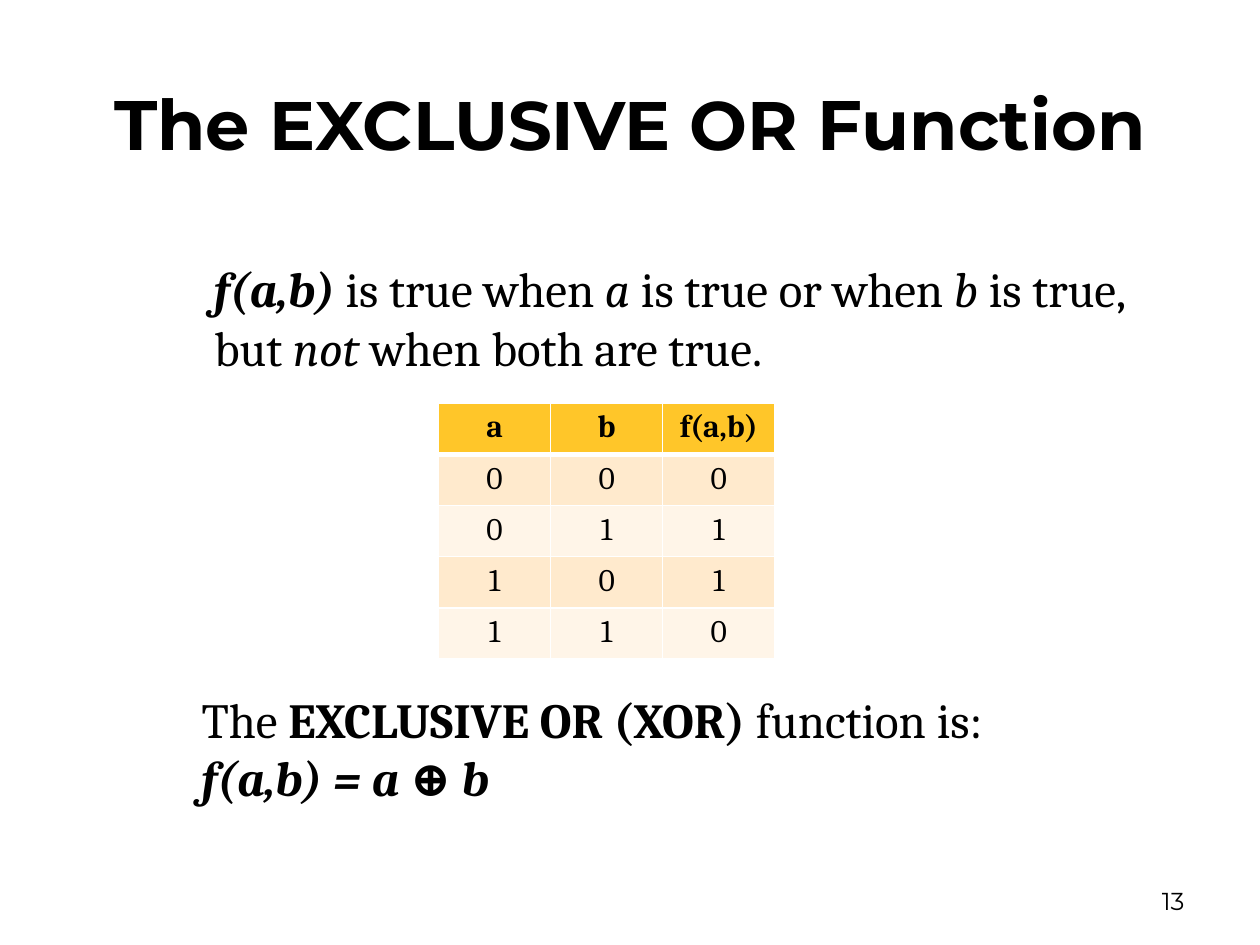
import pptx
import pptx.util
import pptx.dml.color
import pptx.enum.text
import pptx.oxml
import pptx.oxml.ns

Inches, Pt = pptx.util.Inches, pptx.util.Pt
Align = pptx.enum.text.PP_ALIGN
Anchor = pptx.enum.text.MSO_ANCHOR


def paint(part, color):
    part.rgb = pptx.dml.color.RGBColor.from_string(color)


def write(para, runs, size, face="Cambria"):
    """Add (text, style) runs; b is bold, i is italic."""
    for text, style in runs:
        run = para.add_run()
        run.text = text
        run.font.name, run.font.size = face, Pt(size)
        run.font.bold, run.font.italic = "b" in style, "i" in style
        paint(run.font.color, "000000")


deck = pptx.Presentation()
deck.slide_width, deck.slide_height = Inches(10), Inches(7.5)
slide = deck.slides.add_slide(deck.slide_layouts[6])

# Title, with the function name in small capitals
title = slide.shapes.add_textbox(Inches(0.5), Inches(0.3), Inches(9), Inches(1.25))
frame = title.text_frame
frame.word_wrap = True
frame.vertical_anchor = Anchor.MIDDLE
para = frame.paragraphs[0]
para.alignment = Align.CENTER
write(para, [("The ", "b"), ("exclusive or ", "b"), ("Function", "b")], 40, "Montserrat")
name = para.runs[1]
name.font.size = Pt(49)
name.font._element.set("cap", "small")

# Definition above the table, formula below it
notes = [
    (1.58, 1.99, 7.49, [
        ("f(a,b)", "bi"), (" is true when ", ""), ("a", "i"),
        (" is true or when ", ""), ("b", "i"), (" is true, but ", ""),
        ("not", "i"), (" when both are true.", "")]),
    (1.48, 5.41, 7.28, [
        ("The ", ""), ("EXCLUSIVE OR (XOR)", "b"), (" function is: ", ""),
        ("f(a,b) = a ", "bi"), ("⊕ ", "b"), ("b", "bi")]),
]
for left, top, width, runs in notes:
    box = slide.shapes.add_textbox(Inches(left), Inches(top), Inches(width), Inches(1.1))
    frame = box.text_frame
    frame.word_wrap = True
    frame.margin_left = frame.margin_right = Inches(0.12)
    frame.margin_top = frame.margin_bottom = Inches(0.06)
    write(frame.paragraphs[0], runs, 28)

# Truth table
rows = [["a", "b", "f(a,b)"]]
rows += [[str(a), str(b), str(a ^ b)] for a in (0, 1) for b in (0, 1)]
table = slide.shapes.add_table(
    5, 3, Inches(3.48), Inches(3.2), Inches(2.67), Inches(2.03)).table
for r, row in enumerate(rows):
    color = "FFC629" if r == 0 else ("FFF5E8", "FFEACD")[r % 2]
    for c, text in enumerate(row):
        cell = table.cell(r, c)
        para = cell.text_frame.paragraphs[0]
        para.alignment = Align.CENTER
        write(para, [(text, "b" if r == 0 else "")], 18)
        # White borders, thick under the header; they precede the fill
        props = cell._tc.get_or_add_tcPr()
        for side in "LRTB":
            thick = (r, side) in [(0, "B"), (1, "T")]
            props.append(pptx.oxml.parse_xml(
                f'<a:ln{side} {pptx.oxml.ns.nsdecls("a")} w="{Pt(3 if thick else 1)}">'
                '<a:solidFill><a:srgbClr val="FFFFFF"/></a:solidFill>'
                f'</a:ln{side}>'))
        cell.fill.solid()
        paint(cell.fill.fore_color, color)

# Page number
page = slide.shapes.add_textbox(Inches(7.17), Inches(6.95), Inches(2.33), Inches(0.4))
frame = page.text_frame
frame.word_wrap = True
frame.vertical_anchor = Anchor.MIDDLE
frame.paragraphs[0].alignment = Align.RIGHT
write(frame.paragraphs[0], [("13", "")], 14, "Montserrat")

deck.save("out.pptx")
